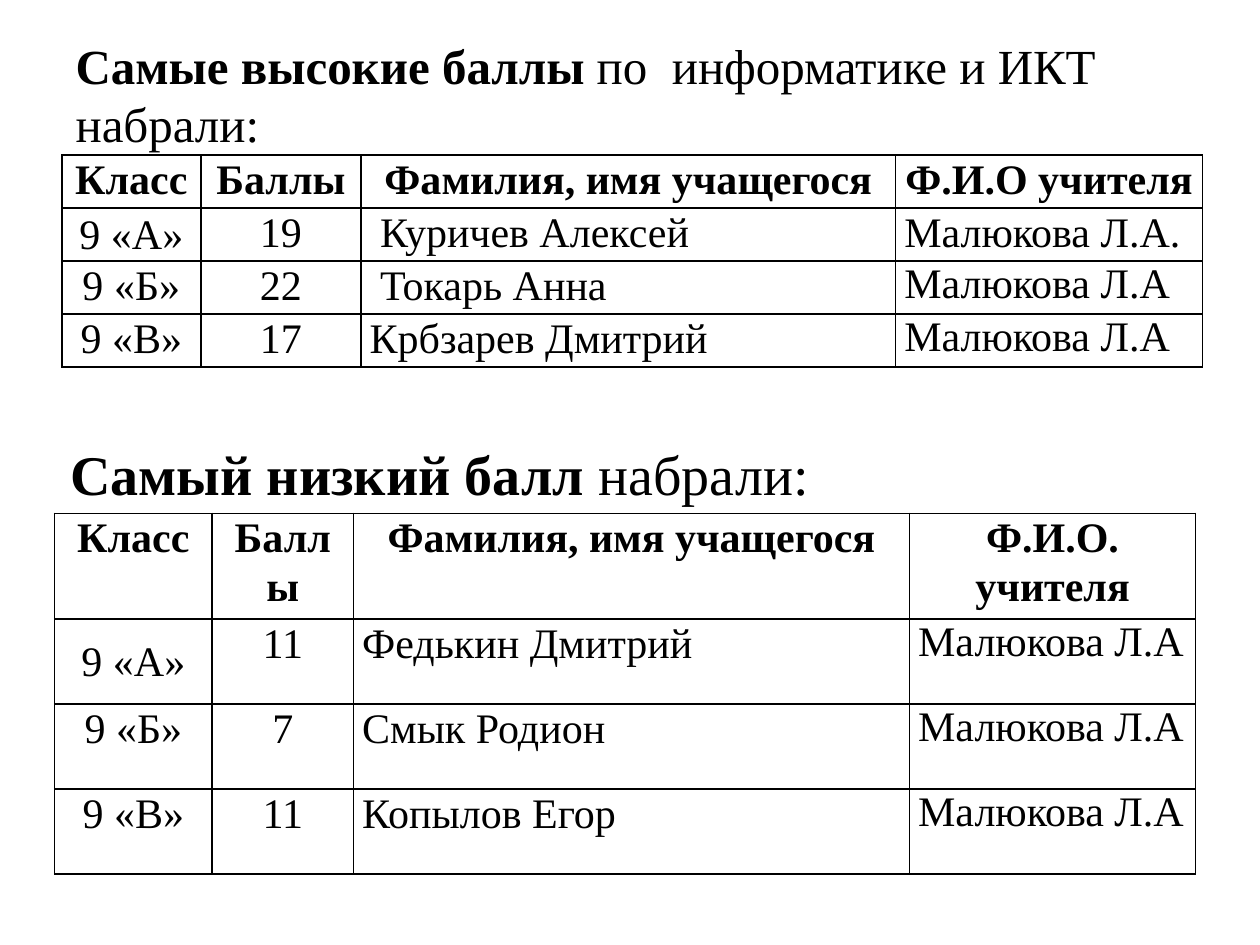
from lxml import etree
from pptx import Presentation
from pptx.dml.color import RGBColor
from pptx.enum.text import MSO_ANCHOR, PP_ALIGN
from pptx.oxml.ns import qn
from pptx.util import Pt

TOP, MIDDLE = MSO_ANCHOR.TOP, MSO_ANCHOR.MIDDLE
LEFT, CENTER, JUSTIFY = PP_ALIGN.LEFT, PP_ALIGN.CENTER, PP_ALIGN.JUSTIFY
COLORS = {"ink": "000000"}
FONT = "Times New Roman"
TEACHER = "Малюкова Л.А"
COLUMN_ALIGNS = [CENTER, CENTER, JUSTIFY, LEFT]
CELL_FORMAT = {"margin_left": Pt(5), "margin_right": Pt(5), "margin_top": 0, "margin_bottom": 0}


def add_span(para, text, size, bold):
    span = para.add_run()
    span.text = text
    for name, value in {"name": FONT, "size": Pt(size), "bold": bold}.items():
        setattr(span.font, name, value)
    span.font.color.rgb = RGBColor.from_string(COLORS["ink"])


def add_borders(cell):
    properties = cell._tc.get_or_add_tcPr()
    for index, side in enumerate(["lnL", "lnR", "lnT", "lnB"]):
        line = etree.Element(qn(f"a:{side}"), w=str(Pt(1)))
        fill = etree.SubElement(line, qn("a:solidFill"))
        etree.SubElement(fill, qn("a:srgbClr"), val=COLORS["ink"])
        properties.insert(index, line)


deck = Presentation()
deck.slide_width, deck.slide_height = Pt(720), Pt(540)
slide = deck.slides.add_slide(deck.slide_layouts[5])

title = slide.shapes.title
for name, value in {"left": Pt(36), "top": Pt(20), "width": Pt(648), "height": Pt(90)}.items():
    setattr(title, name, value)
for name, value in {"vertical_anchor": TOP, "margin_top": 0, "word_wrap": True}.items():
    setattr(title.text_frame, name, value)
para = title.text_frame.paragraphs[0]
para.alignment = LEFT
add_span(para, "Самые высокие баллы ", 28, True)
add_span(para, "по  информатике и ИКТ набрали:", 28, False)

box = slide.shapes.add_textbox(Pt(33.1), Pt(247.7), Pt(440.6), Pt(46))
box.text_frame.word_wrap = False
para = box.text_frame.paragraphs[0]
para.alignment = JUSTIFY
add_span(para, "Самый низкий балл", 32, True)
add_span(para, " набрали:", 32, False)

score_tables = [
    {
        "left": 35.3, "top": 88.6,
        "widths": [79.5, 91.5, 305.5, 175.5],
        "heights": [28, 28, 28, 28],
        "rows": [
            ["Класс", "Баллы", "Фамилия, имя учащегося", "Ф.И.О учителя"],
            ["9 «А»", "19", " Куричев Алексей", TEACHER + "."],
            ["9 «Б»", "22", " Токарь Анна", TEACHER],
            ["9 «В»", "17", "Крбзарев Дмитрий", TEACHER],
        ],
    },
    {
        "left": 31.2, "top": 293.3,
        "widths": [90, 80.8, 317.7, 163.6],
        "heights": [60, 48.6, 48.6, 48.6],
        "rows": [
            ["Класс", "Баллы", "Фамилия, имя учащегося", "Ф.И.О. учителя"],
            ["9 «А»", "11", "Федькин Дмитрий", TEACHER],
            ["9 «Б»", "7", "Смык Родион", TEACHER],
            ["9 «В»", "11", "Копылов Егор", TEACHER],
        ],
    },
]

for scores in score_tables:
    rows, widths, heights = scores["rows"], scores["widths"], scores["heights"]
    table = slide.shapes.add_table(
        len(rows), len(widths), Pt(scores["left"]), Pt(scores["top"]),
        Pt(sum(widths)), Pt(sum(heights))).table
    table.first_row = table.horz_banding = False
    for column, width in zip(table.columns, widths):
        column.width = Pt(width)
    for row, height in zip(table.rows, heights):
        row.height = Pt(height)
    for r, texts in enumerate(rows):
        for c, text in enumerate(texts):
            cell = table.cell(r, c)
            for name, value in CELL_FORMAT.items():
                setattr(cell, name, value)
            cell.vertical_anchor = MIDDLE if (r, c) == (1, 0) else TOP
            cell.fill.background()
            add_borders(cell)
            para = cell.text_frame.paragraphs[0]
            para.alignment = CENTER if r == 0 else COLUMN_ALIGNS[c]
            para.line_spacing = 1.0 if text == TEACHER else 1.05
            add_span(para, text, 24, r == 0)

deck.save("out.pptx")
